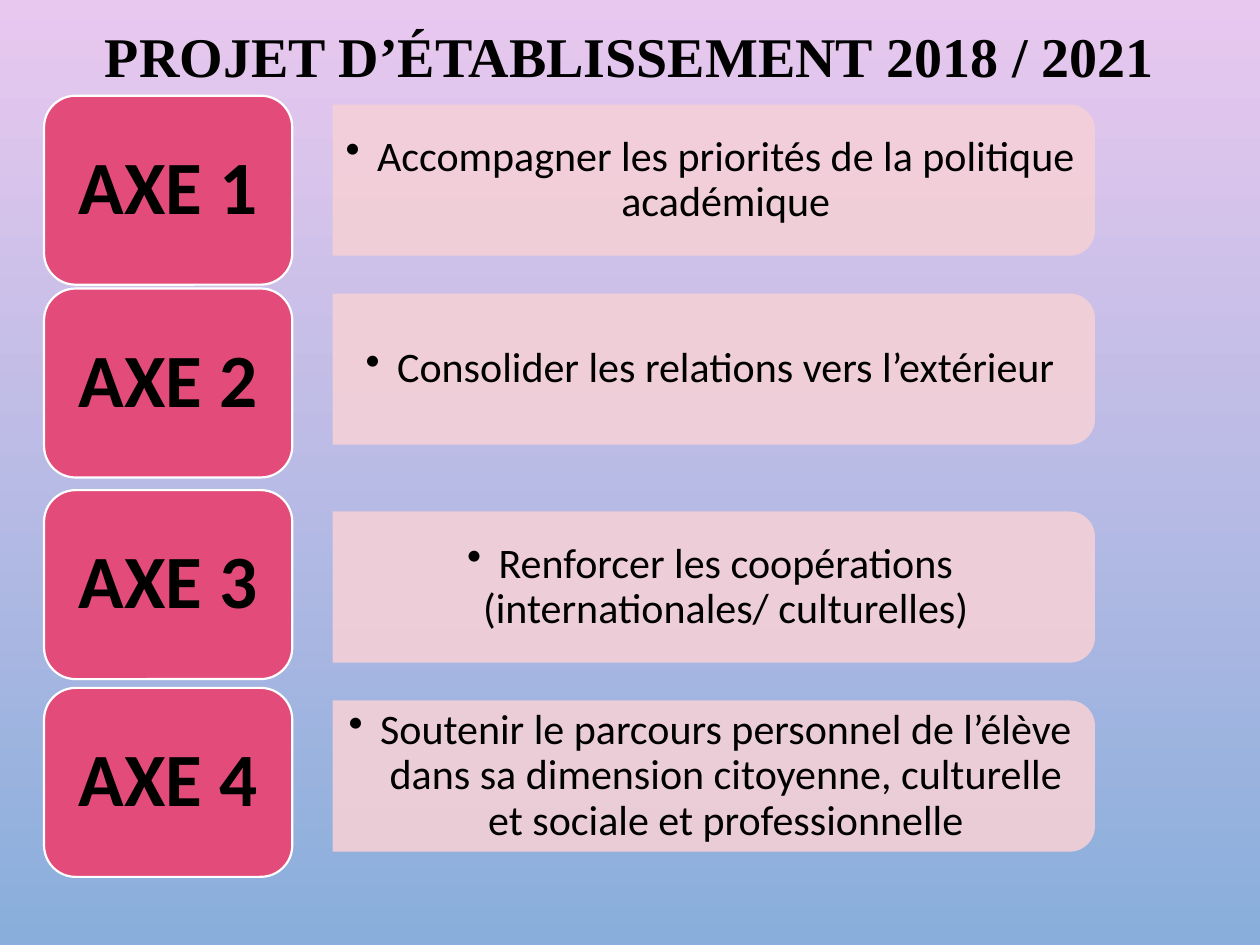
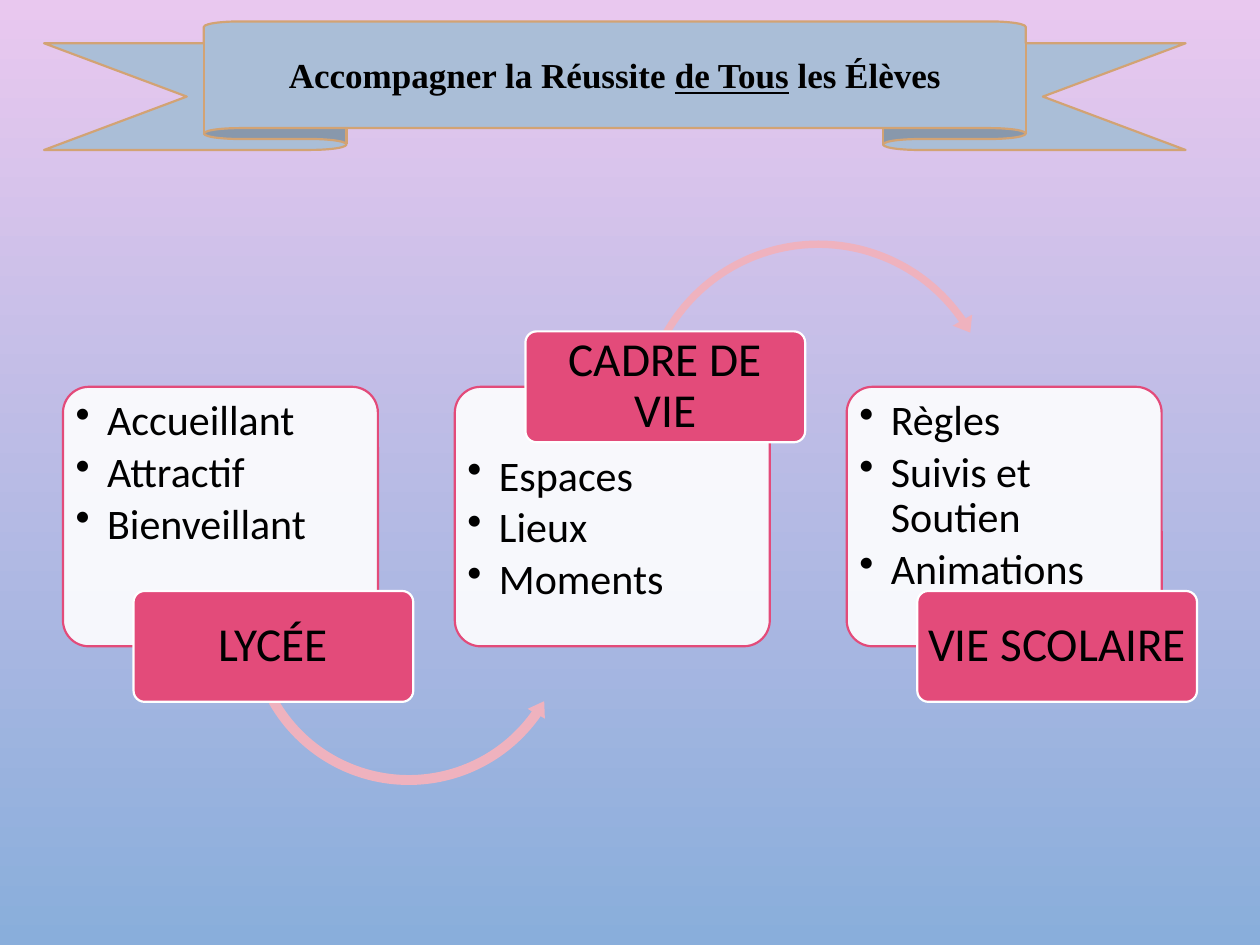
from lxml.etree import SubElement
from pptx import Presentation
from pptx.dml.color import RGBColor
from pptx.enum.shapes import MSO_SHAPE as Shape
from pptx.enum.text import MSO_ANCHOR as Anchor, PP_ALIGN as Align
from pptx.oxml.ns import qn
from pptx.util import Inches, Pt

SKY_TOP, SKY_BOTTOM = "E9C8EF", "89AEDB"
PINK, PALE_PINK, ARROW_PINK = "E34B7A", "F4D0D7", "EFB2BE"
WHITE, BLACK = "FFFFFF", "000000"
RIBBON_BLUE, RIBBON_EDGE = "AABED7", "D2A374"
BODY_FONT, TITLE_FONT = "Calibri", "Times New Roman"

AXES = [
    (0.76, 0.83, "Accompagner les priorités de la politique académique"),
    (2.29, 2.33, "Consolider les relations vers l’extérieur"),
    (3.89, 4.06, "Renforcer les coopérations (internationales/ culturelles)"),
    (5.46, 5.56, "Soutenir le parcours personnel de l’élève dans sa dimension "
                 "citoyenne, culturelle et sociale et professionnelle"),
]
LOWER_ARROW = (Shape.LEFT_CIRCULAR_ARROW, 1.43, 0.57, 2.63,
               (0.03, 3.28, 21.04, 90.25, 0.03))
UPPER_ARROW = (Shape.CIRCULAR_ARROW, 1.41, -1.22, 2.95,
               (0.02, 2.91, 195.34, 125.76, 0.03))
THEMES = [
    ("LYCÉE", ["Accueillant", "Attractif", "Bienveillant"], False, LOWER_ARROW),
    ("CADRE DE VIE", ["Espaces", "Lieux", "Moments"], True, UPPER_ARROW),
    ("VIE SCOLAIRE", ["Règles", "Suivis et Soutien", "Animations"], False, None),
]


def rgb(color):
    return RGBColor.from_string(color)


def paint(fill, color, opacity=100):
    fill.solid()
    fill.fore_color.rgb = rgb(color)
    if opacity < 100:
        for solid in fill._xPr.iter(qn("a:srgbClr")):
            SubElement(solid, qn("a:alpha"), val=str(opacity * 1000))


def add_bullet(paragraph):
    properties = paragraph._p.get_or_add_pPr()
    properties.set("marL", str(Inches(0.25)))
    properties.set("indent", str(-Inches(0.25)))
    SubElement(properties, qn("a:buChar"), char="•")


def write(shape, *texts, size, font=BODY_FONT, bold=False, align=Align.CENTER,
          anchor=Anchor.MIDDLE, insets=(0.1, 0.05, 0.1, 0.05), bullet=False,
          spacing=0.9, gap=0, underlined=None):
    frame = shape.text_frame
    frame.word_wrap = True
    frame.vertical_anchor = anchor
    (frame.margin_left, frame.margin_top,
     frame.margin_right, frame.margin_bottom) = map(Inches, insets)
    for index, text in enumerate(texts):
        paragraph = frame.add_paragraph() if index else frame.paragraphs[0]
        if bullet:
            add_bullet(paragraph)
        paragraph.alignment = align
        paragraph.line_spacing = spacing
        paragraph.space_after = Pt(gap)
        for part in text.partition(underlined) if underlined else [text]:
            run = paragraph.add_run()
            run.text = part
            run.font.size, run.font.name, run.font.bold = Pt(size), font, bold
            run.font.color.rgb = rgb(BLACK)
            if part == underlined:
                run.font.underline = True


def add_panel(slide, kind, left, top, width, height, fill, line=None,
              opacity=100, adjustments=()):
    panel = slide.shapes.add_shape(kind, *map(Inches, (left, top, width, height)))
    panel.shadow.inherit = False
    paint(panel.fill, fill, opacity)
    if line:
        paint(panel.line.fill, line)
        panel.line.width = Pt(1.25)
    else:
        panel.line.fill.background()
    for index, value in enumerate(adjustments):
        panel.adjustments[index] = value
    return panel


def add_text(slide, text, left, top, width, height, **style):
    box = slide.shapes.add_textbox(*map(Inches, (left, top, width, height)))
    write(box, text, **style)


def add_sky_slide(deck):
    slide = deck.slides.add_slide(deck.slide_layouts[6])
    sky = slide.background.fill
    sky.gradient()
    sky.gradient_angle = 270
    for stop, color, position in zip(sky.gradient_stops, (SKY_TOP, SKY_BOTTOM), (0, 1)):
        stop.color.rgb = rgb(color)
        stop.position = position
    return slide


def add_goal(slide, goal, left, top, width=6.05, height=1.2):
    shift = (width - height) / 2
    bar = add_panel(slide, Shape.ROUND_2_SAME_RECTANGLE, left + shift, top - shift,
                    height, width, PALE_PINK, opacity=90)
    bar.rotation = 90
    add_text(slide, goal, left, top + 0.06, width - 0.06, height - 0.12,
             size=24, bullet=True)


def add_axis_tile(slide, label, left, top):
    tile = add_panel(slide, Shape.ROUNDED_RECTANGLE, left, top, 1.97, 1.5, PINK, WHITE)
    write(tile, label, size=43, bold=True, insets=(0.18, 0.09, 0.18, 0.09))


def add_theme(slide, left, top, label, points, label_above, arrow):
    card = add_panel(slide, Shape.ROUNDED_RECTANGLE, left, top, 2.5, 2.06, WHITE,
                     PINK, opacity=90, adjustments=[0.1])
    write(card, *points, size=24, align=Align.LEFT, anchor=Anchor.TOP, bullet=True,
          gap=3.6, insets=(0.04, 0.48 if label_above else 0.04, 0.04, 0.04))
    if arrow:
        kind, dx, dy, side, bends = arrow
        add_panel(slide, kind, left + dx, top + dy, side, side, ARROW_PINK,
                  adjustments=bends)
    label_top = top - 0.44 if label_above else top + 1.62
    tag = add_panel(slide, Shape.ROUNDED_RECTANGLE, left + 0.56, label_top, 2.22, 0.88,
                    PINK, WHITE, adjustments=[0.1])
    write(tag, label, size=27, insets=(0.05, 0.04, 0.05, 0.04))


def add_ribbon(slide, text, left, top, width, height, underlined):
    ribbon = add_panel(slide, Shape.UP_RIBBON, left, top, width, height, RIBBON_BLUE,
                       RIBBON_EDGE, adjustments=[0.17, 0.72])
    write(ribbon, text, size=20, font=TITLE_FONT, bold=True, spacing=1.0,
          underlined=underlined)


def build_axes_slide(deck):
    slide = add_sky_slide(deck)
    add_text(slide, "PROJET D’ÉTABLISSEMENT 2018 / 2021", 0.5, 0.13, 9, 0.63,
             size=32, font=TITLE_FONT, bold=True, anchor=Anchor.BOTTOM)
    for number, (tile_top, goal_top, goal) in enumerate(AXES, 1):
        add_goal(slide, goal, 2.64, goal_top)
        add_axis_tile(slide, f"AXE {number}", 0.35, tile_top)


def build_themes_slide(deck):
    slide = add_sky_slide(deck)
    for column, theme in enumerate(THEMES):
        add_theme(slide, 0.5 + column * 3.11, 3.07, *theme)
    add_ribbon(slide, "Accompagner la Réussite de Tous les Élèves",
               0.35, 0.17, 9.06, 1.02, underlined="de Tous")


def main():
    deck = Presentation()
    deck.slide_width, deck.slide_height = Inches(10), Inches(7.5)
    build_axes_slide(deck)
    build_themes_slide(deck)
    deck.save("out.pptx")


if __name__ == "__main__":
    main()
